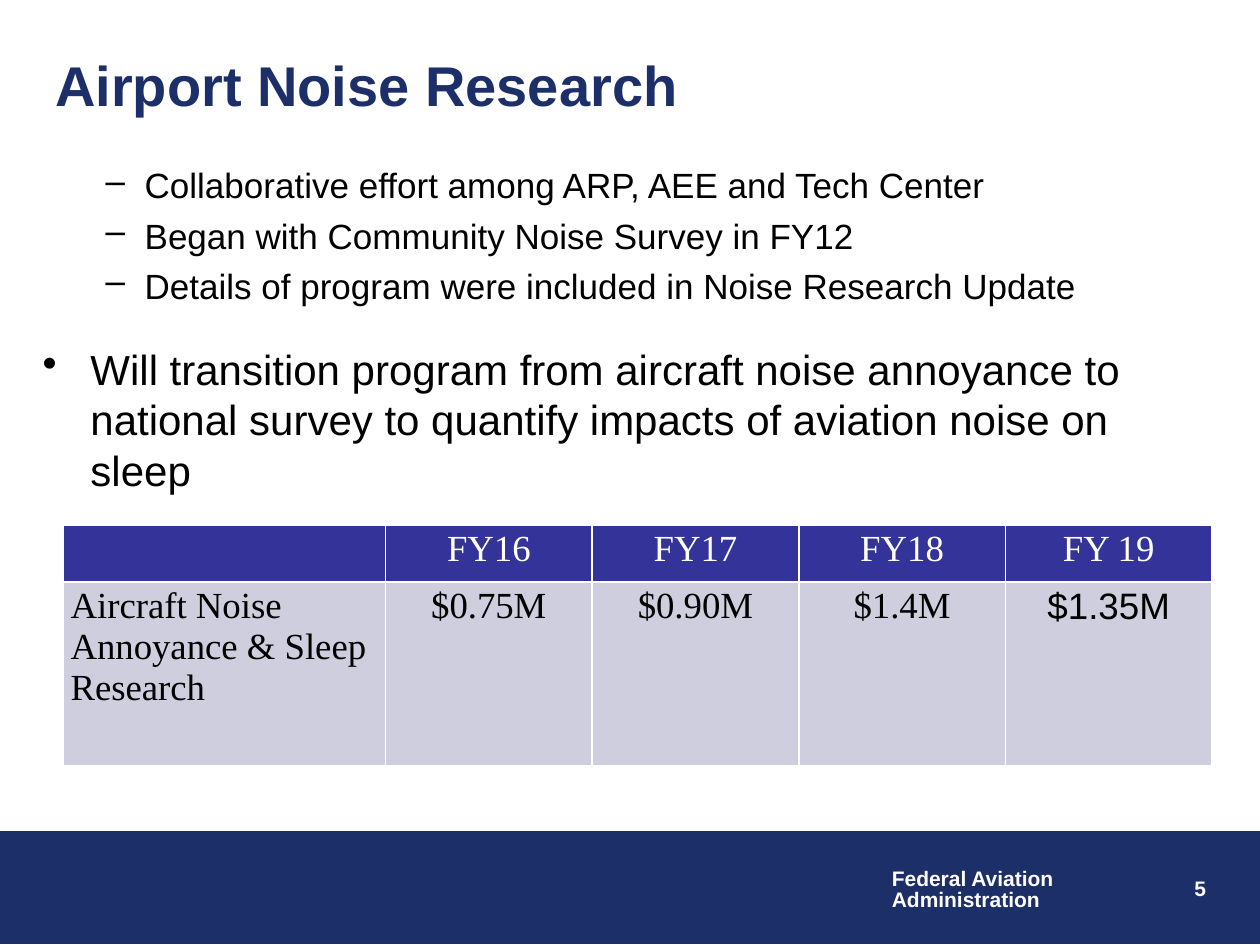
import pptx
import pptx.chart.data
import pptx.dml.color
import pptx.enum.shapes
import pptx.enum.text
import pptx.oxml.ns
import pptx.util
from lxml import etree
from pptx.util import Inches

COLORS = {"navy": "1D2F68", "header": "333399", "row": "CECEDE",
          "white": "FFFFFF", "black": "000000"}
ALIGN = pptx.enum.text.PP_ALIGN
qn = pptx.oxml.ns.qn


def rgb(name):
    return pptx.dml.color.RGBColor.from_string(COLORS[name])


def write(frame, text, size=20, font="Arial", color="black", bold=False,
          align=ALIGN.LEFT, before=0, spacing=None, bullet=None,
          margin=0, hanging=0):
    """Fill the first empty paragraph of the frame, or add a new one."""
    paragraph = frame.paragraphs[0]
    if paragraph.runs:
        paragraph = frame.add_paragraph()
    paragraph.alignment = align
    if bullet:
        props = paragraph._p.get_or_add_pPr()
        props.set("marL", str(Inches(margin)))
        props.set("indent", str(-Inches(hanging)))
        etree.SubElement(props, qn("a:buChar"), char=bullet)
    if before:
        paragraph.space_before = pptx.util.Pt(before)
    if spacing:
        paragraph.line_spacing = spacing
    run = paragraph.add_run()
    run.text = text
    run.font.size = pptx.util.Pt(size)
    run.font.name = font
    run.font.bold = bold
    run.font.color.rgb = rgb(color)


deck = pptx.Presentation()
deck.slide_width, deck.slide_height = Inches(10), Inches(7.5)
slide = deck.slides.add_slide(deck.slide_layouts[6])
shapes = slide.shapes

# Footer band
band = shapes.add_shape(pptx.enum.shapes.MSO_SHAPE.RECTANGLE,
                        Inches(0), Inches(6.6), Inches(10), Inches(0.89))
band.shadow.inherit = False
band.fill.solid()
band.fill.fore_color.rgb = rgb("navy")
band.line.color.rgb = rgb("navy")
band.line.width = pptx.util.Pt(0.75)

# Page number and agency name
page_number = shapes.add_textbox(Inches(7.59), Inches(6.9), Inches(2.08), Inches(0.5)).text_frame
page_number.word_wrap = True
write(page_number, "5", size=12, color="white", bold=True, align=ALIGN.RIGHT)

agency = shapes.add_textbox(Inches(6.98), Inches(6.85), Inches(1.5), Inches(0.44)).text_frame
agency.word_wrap = False
for line in ("Federal Aviation", "Administration"):
    write(agency, line, size=12, color="white", bold=True, spacing=0.85)

# Title
title = shapes.add_textbox(Inches(0.34), Inches(0.33), Inches(9.27), Inches(0.67)).text_frame
title.word_wrap = True
title.vertical_anchor = pptx.enum.text.MSO_ANCHOR.MIDDLE
write(title, "Airport Noise Research", size=32, color="navy", bold=True)

# Funding table
funding_rows = [
    ["", "FY16", "FY17", "FY18", "FY 19"],
    ["Aircraft Noise Annoyance & Sleep Research", "$0.75M", "$0.90M", "$1.4M", "$1.35M"],
]
funding = shapes.add_table(2, 5, Inches(0.5), Inches(4.17), Inches(9.1), Inches(1.91)).table
for column, width in zip(funding.columns, [2.56] + [1.64] * 4):
    column.width = Inches(width)
for row, height in zip(funding.rows, [0.45, 1.46]):
    row.height = Inches(height)

for r, values in enumerate(funding_rows):
    for c, value in enumerate(values):
        cell = funding.cell(r, c)
        cell.margin_left = cell.margin_right = Inches(0.06)
        cell.margin_top = cell.margin_bottom = Inches(0.03)
        for side in ("a:lnL", "a:lnR", "a:lnT", "a:lnB"):
            border = etree.SubElement(cell._tc.get_or_add_tcPr(), qn(side),
                                      w=str(pptx.util.Pt(1)))
            solid = etree.SubElement(border, qn("a:solidFill"))
            etree.SubElement(solid, qn("a:srgbClr"), val=COLORS["white"])
        cell.fill.solid()
        cell.fill.fore_color.rgb = rgb("row" if r else "header")
        if value:
            write(cell.text_frame, value, size=21,
                  font="Arial" if value == "$1.35M" else "Times New Roman",
                  color="black" if r else "white",
                  align=ALIGN.CENTER if c else ALIGN.LEFT)

# Bulleted text
body = shapes.add_textbox(Inches(0.24), Inches(1.25), Inches(9.43), Inches(3.02)).text_frame
body.word_wrap = True
details = ["Collaborative effort among ARP, AEE and Tech Center",
           "Began with Community Noise Survey in FY12",
           "Details of program were included in Noise Research Update"]
for i, detail in enumerate(details):
    write(body, detail, before=4.8 if i else 0, bullet="–", margin=0.81, hanging=0.31)
write(body, "Will transition program from aircraft noise annoyance to national survey "
      "to quantify impacts of aviation noise on sleep",
      size=24, before=21, bullet="•", margin=0.38, hanging=0.38)

deck.save("out.pptx")
